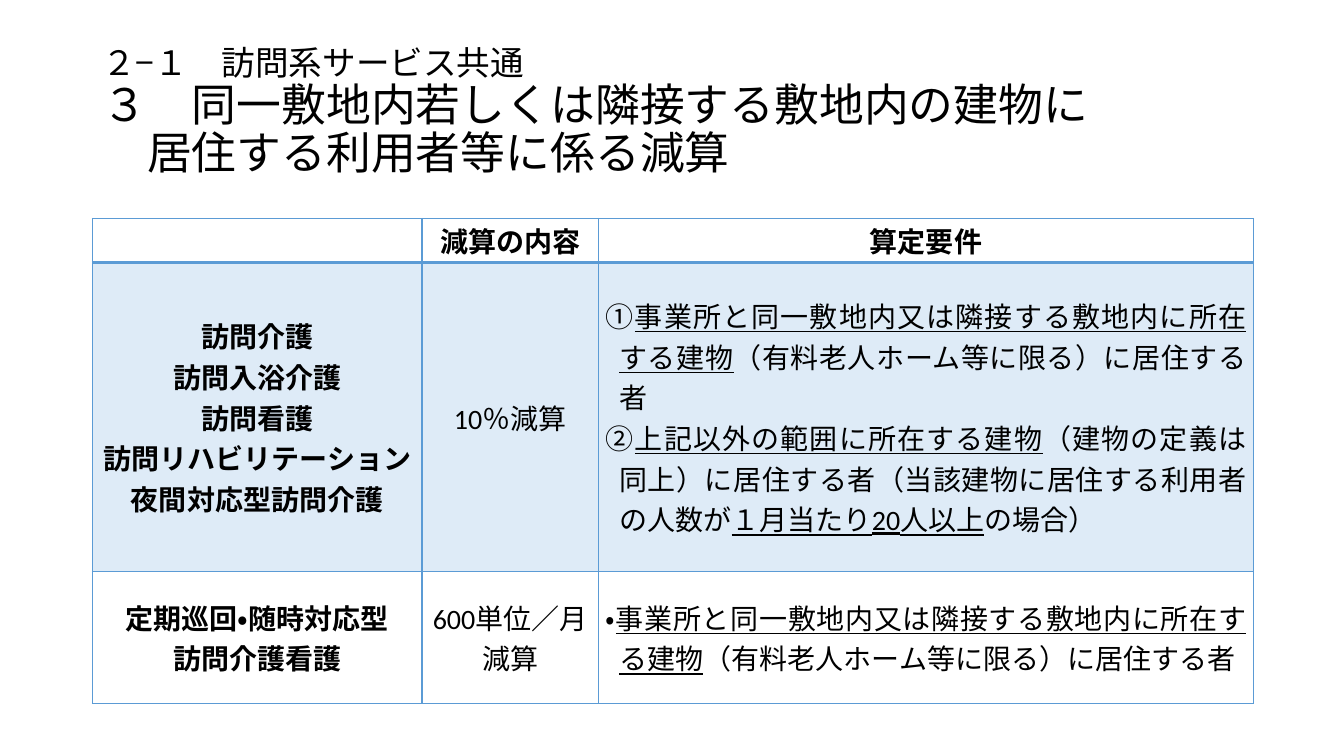
from dataclasses import dataclass

from lxml.etree import SubElement
from pptx import Presentation
from pptx.dml.color import RGBColor
from pptx.enum.lang import MSO_LANGUAGE_ID as Language
from pptx.enum.text import MSO_ANCHOR as Anchor, PP_ALIGN as Align
from pptx.oxml.ns import qn
from pptx.util import Pt

PX = 9525


@dataclass(frozen=True)
class Theme:
    """Colours, font and type sizes of the slide."""

    font: str = "Calibri"
    text: str = "000000"
    border: str = "5B9BD5"
    band: str = "DEEBF7"
    section_size: int = 24
    title_size: int = 32
    body_size: int = 20


THEME = Theme()

TITLE_LINES = [
    ("２−１　訪問系サービス共通", THEME.section_size),
    ("３　同一敷地内若しくは隣接する敷地内の建物に", THEME.title_size),
    ("　居住する利用者等に係る減算", THEME.title_size),
]

COLUMN_WIDTHS = [314, 168, 624]
ROW_HEIGHTS = [42, 294, 126]
HEADINGS = ["", "減算の内容", "算定要件"]
SAME_SITE = "事業所と同一敷地内又は隣接する敷地内に所在する建物"
RESIDENTS = "（有料老人ホーム等に限る）に居住する者"

REDUCTIONS = [
    (
        ["訪問介護", "訪問入浴介護", "訪問看護", "訪問リハビリテーション", "夜間対応型訪問介護"],
        ["10％減算"],
        [
            [("①", False), (SAME_SITE, True), (RESIDENTS, False)],
            [
                ("②", False),
                ("上記以外の範囲に所在する建物", True),
                ("（建物の定義は同上）に居住する者（当該建物に居住する利用者の人数が", False),
                ("１月当たり20人以上", True),
                ("の場合）", False),
            ],
        ],
    ),
    (
        ["定期巡回・随時対応型", "訪問介護看護"],
        ["600単位／月", "減算"],
        [[("・", False), (SAME_SITE, True), (RESIDENTS, False)]],
    ),
]


def add_run(paragraph, text, size, bold=False, underline=False):
    """Append one styled run to a paragraph."""
    run = paragraph.add_run()
    run.text = text
    font = run.font
    font.name = THEME.font
    font.size = Pt(size)
    font.bold = bold
    font.underline = underline
    font.language_id = Language.JAPANESE
    font.color.rgb = RGBColor.from_string(THEME.text)


def add_title(slide, left, top, width, height):
    """Place the section name and the two-line title in a box."""
    box = slide.shapes.add_textbox(left * PX, top * PX, width * PX, height * PX)
    frame = box.text_frame
    frame.word_wrap = True
    frame.vertical_anchor = Anchor.MIDDLE
    paragraph = frame.paragraphs[0]
    paragraph.line_spacing = 0.9
    for index, (text, size) in enumerate(TITLE_LINES):
        if index:
            paragraph.add_line_break()
        add_run(paragraph, text, size)


def set_borders(cell, top, bottom):
    """Draw the four borders of a cell, with top and bottom widths in points."""
    properties = cell._tc.get_or_add_tcPr()
    widths = {"a:lnL": 1, "a:lnR": 1, "a:lnT": top, "a:lnB": bottom}
    for index, (tag, width) in enumerate(widths.items()):
        line = SubElement(properties, qn(tag), w=str(Pt(width)))
        fill = SubElement(line, qn("a:solidFill"))
        SubElement(fill, qn("a:srgbClr"), val=THEME.border)
        properties.insert(index, line)


def fill_cell(cell, paragraphs, bold=False, hanging=False):
    """Write paragraphs of (text, underline) runs into a cell."""
    cell.vertical_anchor = Anchor.MIDDLE
    cell.margin_left = cell.margin_right = 7 * PX
    cell.margin_top = cell.margin_bottom = 0
    frame = cell.text_frame
    for index, runs in enumerate(paragraphs):
        paragraph = frame.add_paragraph() if index else frame.paragraphs[0]
        paragraph.alignment = Align.JUSTIFY if hanging else Align.CENTER
        if hanging:
            properties = paragraph._p.get_or_add_pPr()
            properties.set("marL", str(13 * PX))
            properties.set("indent", str(-13 * PX))
        for text, underline in runs:
            add_run(paragraph, text, THEME.body_size, bold, underline)


def plain(lines):
    """Turn lines of text into paragraphs of one run without underline."""
    return [[(line, False)] for line in lines if line]


def add_reduction_table(slide, left, top, width, height):
    """Place the table of reductions and their requirements in a box."""
    table = slide.shapes.add_table(
        len(ROW_HEIGHTS), len(COLUMN_WIDTHS), left * PX, top * PX, width * PX, height * PX
    ).table
    table.first_row = table.horz_banding = False
    for column, column_width in zip(table.columns, COLUMN_WIDTHS):
        column.width = column_width * PX
    for row, row_height in zip(table.rows, ROW_HEIGHTS):
        row.height = row_height * PX

    for column, heading in enumerate(HEADINGS):
        fill_cell(table.cell(0, column), plain([heading]), bold=True)
    for row, (services, reduction, requirements) in enumerate(REDUCTIONS, 1):
        fill_cell(table.cell(row, 0), plain(services), bold=True)
        fill_cell(table.cell(row, 1), plain(reduction))
        fill_cell(table.cell(row, 2), requirements, hanging=True)

    for index, row in enumerate(table.rows):
        for cell in row.cells:
            if index == 1:
                cell.fill.solid()
                cell.fill.fore_color.rgb = RGBColor.from_string(THEME.band)
            else:
                cell.fill.background()
            set_borders(cell, top=2 if index == 1 else 1, bottom=2 if index == 0 else 1)


def main():
    """Build the slide and save it."""
    presentation = Presentation()
    presentation.slide_width = 1280 * PX
    presentation.slide_height = 720 * PX
    slide = presentation.slides.add_slide(presentation.slide_layouts[6])
    add_title(slide, 88, 38, 1104, 139)
    add_reduction_table(slide, 88, 208, sum(COLUMN_WIDTHS), sum(ROW_HEIGHTS))
    presentation.save("out.pptx")


if __name__ == "__main__":
    main()
